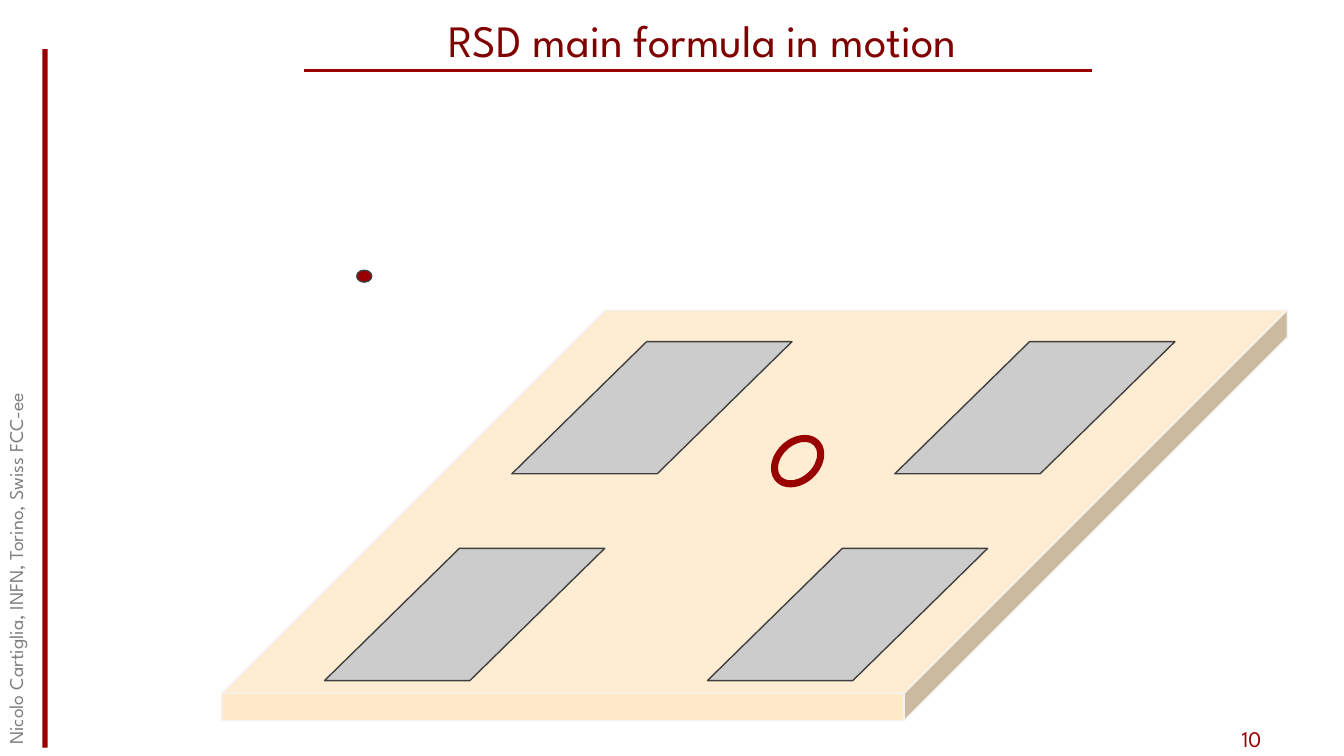
from dataclasses import dataclass

from lxml import etree
from pptx import Presentation
from pptx.dml.color import RGBColor
from pptx.enum.shapes import MSO_CONNECTOR as Connector, MSO_SHAPE as Shape
from pptx.enum.text import MSO_ANCHOR as Anchor, PP_ALIGN as Align
from pptx.oxml.ns import qn
from pptx.util import Cm, Pt


@dataclass(frozen=True)
class Theme:
    font: str = "League Spartan"
    accent: str = "990000"
    title: str = "800000"
    muted: str = "808080"
    sensor: str = "FFE9C8"
    sensor_edge: str = "F2F2F2"
    pad: str = "CCCCCC"
    outline: str = "404040"
    title_size: int = 32
    number_size: int = 16
    footer_size: int = 14


def write_text(box, text, *, font, size, color, align=Align.LEFT, anchor=Anchor.TOP):
    frame = box.text_frame
    frame.word_wrap = True
    frame.vertical_anchor = anchor
    para = frame.paragraphs[0]
    para.alignment = align
    span = para.add_run()
    span.text = text
    span.font.name = font
    span.font.size = Pt(size)
    span.font.color.rgb = RGBColor.from_string(color)


class SlidePainter:
    def __init__(self, page, theme):
        self.page = page
        self.theme = theme

    def shape(self, kind, left, top, width, height, fill, edge=None, adjust=None, turn=0):
        item = self.page.shapes.add_shape(kind, Cm(left), Cm(top), Cm(width), Cm(height))
        item.shadow.inherit = False
        item.rotation = turn
        item.fill.solid()
        item.fill.fore_color.rgb = RGBColor.from_string(fill)
        if edge:
            item.line.color.rgb = RGBColor.from_string(edge)
            item.line.width = Pt(1)
        else:
            item.line.fill.background()
        if adjust is not None:
            item.adjustments[0] = adjust
        return item

    def rule(self, left, right, top, color, width):
        line = self.page.shapes.add_connector(
            Connector.STRAIGHT, Cm(left), Cm(top), Cm(right), Cm(top))
        line.line.color.rgb = RGBColor.from_string(color)
        line.line.width = Pt(width)
        properties = line._element.find(qn("p:spPr"))
        etree.SubElement(properties, qn("a:effectLst"))

    def text(self, text, left, top, width, height, size, color, turn=0, **layout):
        box = self.page.shapes.add_textbox(Cm(left), Cm(top), Cm(width), Cm(height))
        box.rotation = turn
        write_text(box, text, font=self.theme.font, size=size, color=color, **layout)


def main():
    deck = Presentation()
    deck.slide_width, deck.slide_height = Cm(33.87), Cm(19.05)
    theme = Theme()
    painter = SlidePainter(deck.slides.add_slide(deck.slide_layouts[6]), theme)

    # Page frame: side bar, title rule, title, footer and page number
    painter.shape(Shape.RECTANGLE, 1.07, 1.24, 0.13, 17.6, theme.accent)
    painter.rule(7.65, 27.51, 1.78, theme.accent, 2)
    painter.text("RSD main formula in motion", 1.3, -0.05, 32.82, 1.85,
                 theme.title_size, theme.title, align=Align.CENTER, anchor=Anchor.BOTTOM)
    painter.text("Nicolo Cartiglia, INFN, Torino, Swiss FCC-ee", -8.86, 9.22, 18.62, 0.97,
                 theme.footer_size, theme.muted, turn=270)
    painter.text("10", 31.04, 18.16, 2.06, 0.89,
                 theme.number_size, theme.accent, anchor=Anchor.MIDDLE)

    # Sensor slab
    painter.shape(Shape.CUBE, 5.59, 7.82, 26.85, 10.34,
                  theme.sensor, theme.sensor_edge, adjust=0.934)

    # Readout pads: two rows, the far one shifted along the slab's slant
    for row_left, row_top in ((8.18, 13.82), (12.9, 8.61)):
        for column in range(2):
            painter.shape(Shape.PARALLELOGRAM, row_left + column * 9.65, row_top, 7.06, 3.33,
                          theme.pad, theme.outline, adjust=1.02)

    # Particle and its hit ring
    painter.shape(Shape.OVAL, 8.99, 6.81, 0.38, 0.3, theme.accent, theme.outline)
    painter.shape(Shape.DONUT, 19.53, 10.87, 1.14, 1.5, theme.accent, adjust=0.157, turn=46.6)

    deck.save("out.pptx")


if __name__ == "__main__":
    main()
